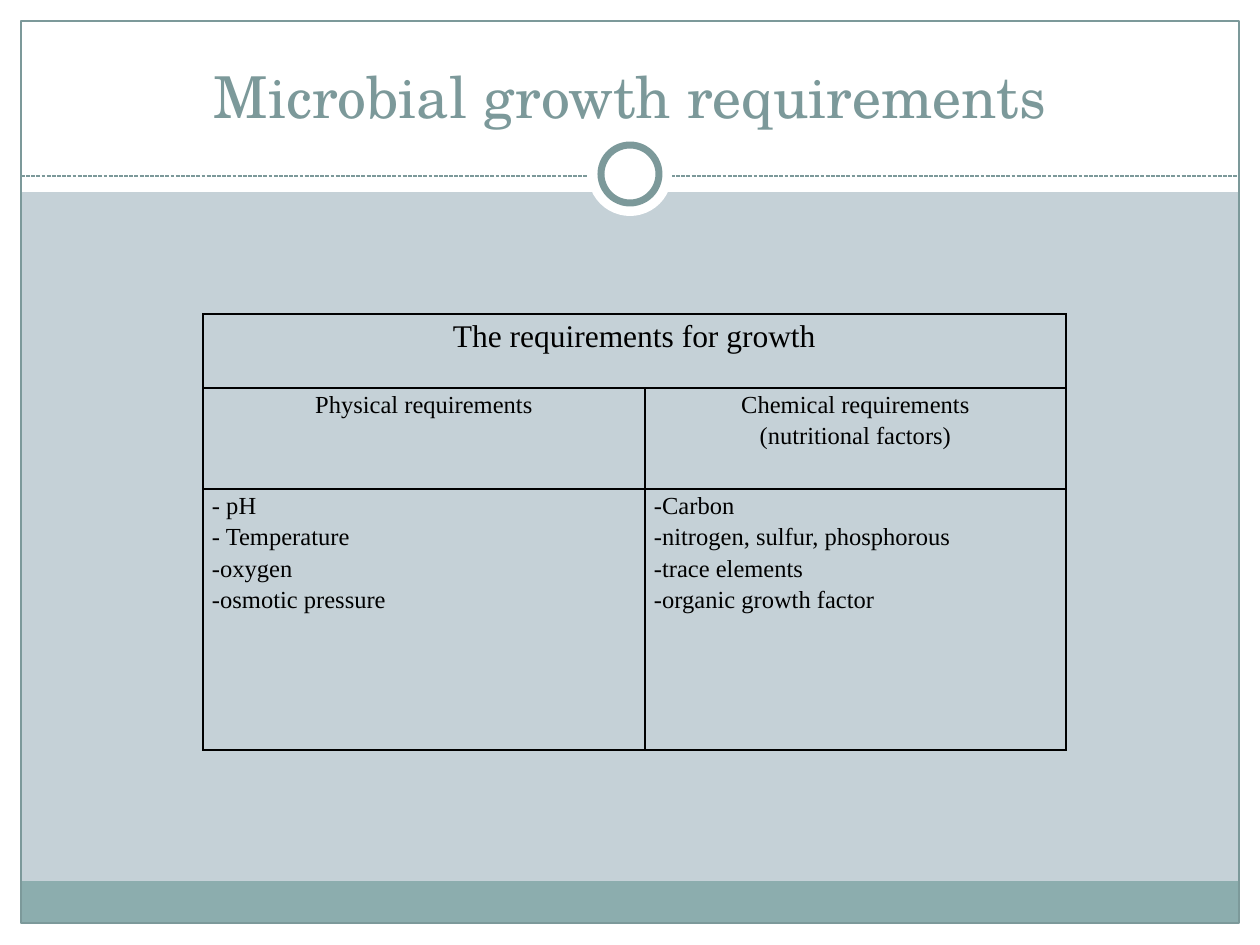
from lxml import etree
from pptx import Presentation, util as u
from pptx.dml.color import RGBColor
from pptx.enum import dml, shapes, text
from pptx.oxml import ns

PX = 914400 / 126
WHITE = RGBColor(0xFF, 0xFF, 0xFF)
BLACK = RGBColor(0, 0, 0)
MIST = RGBColor(0xC5, 0xD1, 0xD7)
SAGE = RGBColor(0x8C, 0xAD, 0xAE)
TEAL = RGBColor(0x7C, 0x99, 0x9A)
CENTER = text.PP_ALIGN.CENTER
RECT, OVAL = shapes.MSO_SHAPE.RECTANGLE, shapes.MSO_SHAPE.OVAL


def px(*lengths):
    return [u.Emu(round(n * PX)) for n in lengths]


def write(tf, content, font, size, color=BLACK, align=None, spacing=None):
    """Fill a text frame, one paragraph for each line of content."""
    for i, line in enumerate(content.split("\n")):
        p = tf.add_paragraph() if i else tf.paragraphs[0]
        p.alignment, p.line_spacing = align, spacing
        r = p.add_run()
        r.text = line
        r.font.name, r.font.size = font, u.Pt(size)
        r.font.color.rgb = color


prs = Presentation()
prs.slide_width, prs.slide_height = px(1260, 945)
s = prs.slides.add_slide(prs.slide_layouts[6])
s.background.fill.solid()
s.background.fill.fore_color.rgb = MIST

# Margins, header band, footer bar and frame, then the ring on the divider
for kind, box, fill, line_width in [
    (RECT, (0, 924, 1260, 21), WHITE, None),
    (RECT, (0, 0, 1260, 192), WHITE, None),
    (RECT, (0, 0, 21, 945), WHITE, None),
    (RECT, (1239, 0, 21, 945), WHITE, None),
    (RECT, (21, 881, 1217, 43), SAGE, None),
    (RECT, (21, 21, 1218, 902), None, 0.75),
    ("divider", (21, 176, 1239, 176), None, 0.75),
    (OVAL, (588, 132, 84, 84), WHITE, None),
    (OVAL, (601, 145, 58, 58), WHITE, 4),
]:
    if kind == "divider":
        sp = s.shapes.add_connector(shapes.MSO_CONNECTOR.STRAIGHT, *px(*box))
        sp.line.dash_style = dml.MSO_LINE.SQUARE_DOT
        etree.SubElement(sp._element.spPr, ns.qn("a:effectLst"))
    else:
        sp = s.shapes.add_shape(kind, *px(*box))
        sp.shadow.inherit = False
        if fill is None:
            sp.fill.background()
        else:
            sp.fill.solid()
            sp.fill.fore_color.rgb = fill
    if line_width is None:
        sp.line.fill.background()
    else:
        sp.line.color.rgb = TEAL
        sp.line.width = u.Pt(line_width)

title = s.shapes.add_textbox(*px(42, 32, 1176, 104))
tf = title.text_frame
tf.word_wrap = True
tf.vertical_anchor = text.MSO_ANCHOR.BOTTOM
write(tf, "Microbial growth requirements", "TeX Gyre Schola", 33, TEAL, CENTER)

# Requirements table
rows = [
    ["The requirements for growth", ""],
    ["Physical requirements", "Chemical requirements\n(nutritional factors)"],
    ["- pH\n- Temperature\n-oxygen\n-osmotic pressure",
     "-Carbon\n-nitrogen, sulfur, phosphorous\n-trace elements\n-organic growth factor"],
]
table = s.shapes.add_table(3, 2, *px(203, 314, 863, 436)).table
table.first_row = table.horz_banding = False
for column, width in zip(table.columns, px(442, 421)):
    column.width = width
for row, height in zip(table.rows, px(74, 101, 261)):
    row.height = height
table.cell(0, 0).merge(table.cell(0, 1))

for i, row in enumerate(rows):
    for j, content in enumerate(row):
        cell = table.cell(i, j)
        cell.margin_left, cell.margin_right = px(9, 9)
        cell.margin_top = cell.margin_bottom = 0
        cell.fill.background()
        tcPr = cell._tc.get_or_add_tcPr()
        for k, side in enumerate(("lnL", "lnR", "lnT", "lnB")):
            ln = etree.Element(ns.qn(f"a:{side}"), w=str(u.Pt(1)))
            fill = etree.SubElement(ln, ns.qn("a:solidFill"))
            etree.SubElement(fill, ns.qn("a:srgbClr"), val=str(BLACK))
            tcPr.insert(k, ln)
        if content:
            write(cell.text_frame, content, "Times New Roman", 14 if i else 18,
                  align=CENTER if i < 2 else None, spacing=1.15)

prs.save("out.pptx")
